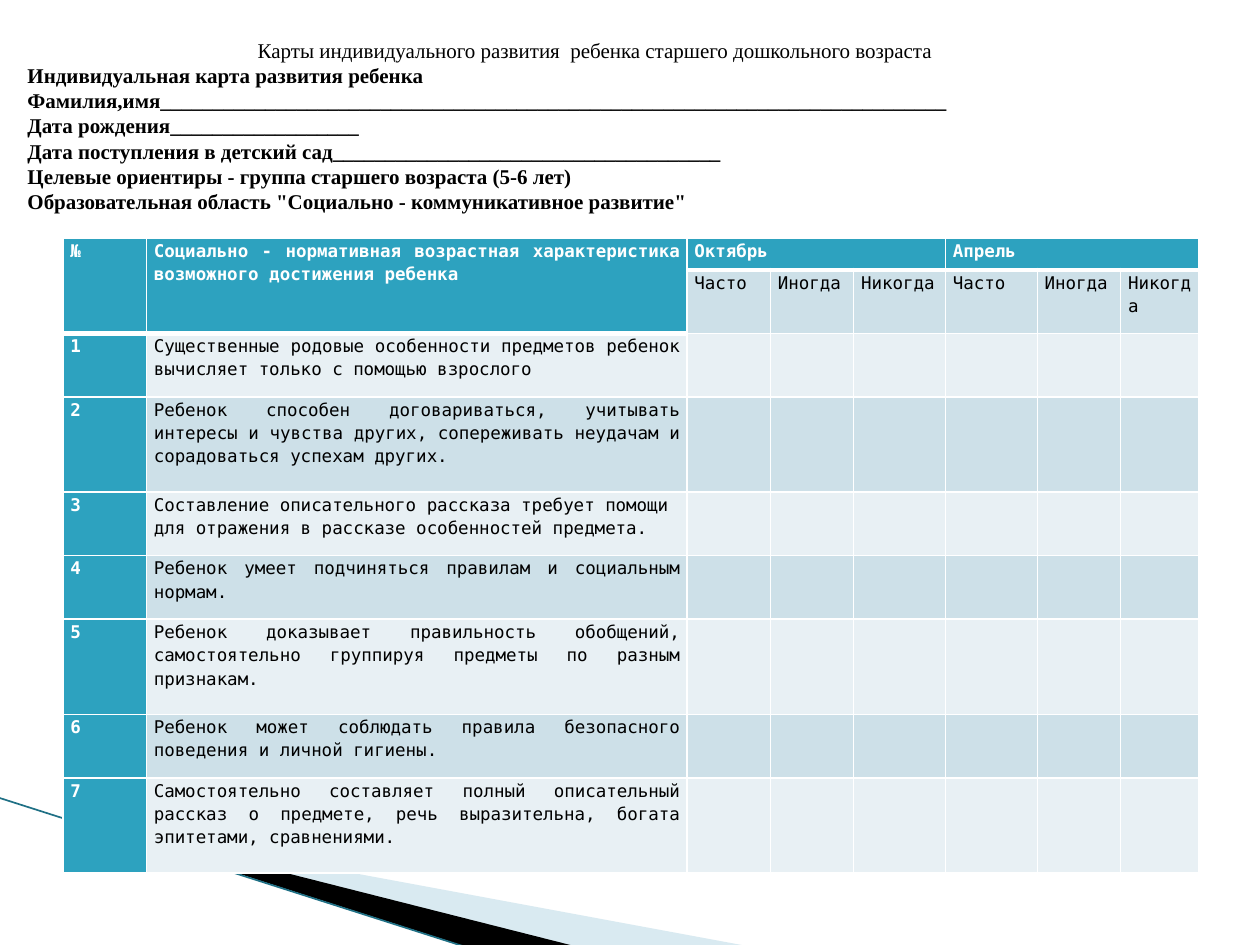
from lxml import etree
from pptx import Presentation
from pptx.dml.color import RGBColor
from pptx.enum.shapes import MSO_CONNECTOR
from pptx.enum.text import MSO_ANCHOR, MSO_AUTO_SIZE, PP_ALIGN
from pptx.oxml.ns import qn
from pptx.util import Cm, Pt

LEFT, CENTER, JUST = PP_ALIGN.LEFT, PP_ALIGN.CENTER, PP_ALIGN.JUSTIFY
SERIF, MONO = "Times New Roman", "DejaVu Sans Mono"
TEAL, PALE, MIST = "2DA2BF", "CDE0E8", "E8F0F4"
WHITE, BLACK = "FFFFFF", "000000"

# Content
HEAD = [
    "Карты индивидуального развития  ребенка старшего дошкольного возраста",
    "Индивидуальная карта развития ребенка",
    "Фамилия,имя" + "_" * 75,
    "Дата рождения" + "_" * 18,
    "Дата поступления в детский сад" + "_" * 37,
    "Целевые ориентиры - группа старшего возраста (5-6 лет)",
    'Образовательная область "Социально - коммуникативное развитие"',
]
LABEL = "Социально - нормативная возрастная характеристика возможного достижения ребенка"
MONTHS = ["Октябрь", "Апрель"]
RATES = ["Часто", "Иногда", "Никогда"]
GOALS = [
    "Существенные родовые особенности предметов ребенок вычисляет только с помощью взрослого",
    "Ребенок способен договариваться, учитывать интересы и чувства других, "
    "сопереживать неудачам и сорадоваться успехам других.",
    "Составление описательного рассказа требует помощи для отражения в рассказе "
    "особенностей предмета.",
    "Ребенок умеет подчиняться правилам и социальным нормам.",
    "Ребенок доказывает правильность обобщений, самостоятельно группируя предметы "
    "по разным признакам.",
    "Ребенок может соблюдать правила безопасного поведения и личной гигиены.",
    "Самостоятельно составляет полный описательный рассказ о предмете, речь "
    "выразительна, богата эпитетами, сравнениями.",
]
RAGGED = 3  # the one goal that is set flush left
COLS = [1.68, 10.9, 1.68, 1.68, 1.85, 1.85, 1.68, 1.57]
UNITS = [1, 2, 2, 3, 2, 2, 3, 2, 3]  # row heights in quarter inches
UNIT = 0.64
BANDS = [
    ([(1.4, 16.54), (15.11, 19.08), (11.58, 19.08), (1.4, 16.51)], "A0CBDC", 40),
    ([(1.35, 16.48), (11.61, 19.08), (9.45, 19.1), (1.37, 16.51)], BLACK, 100),
]


def color(code):
    return RGBColor.from_string(code)


def style(par, face, size, code, bold, align):
    par.alignment = align
    for run in par.runs:
        font = run.font
        font.name, font.size, font.bold = face, Pt(size), bold
        font.color.rgb = color(code)


def add_band(shapes, points, code, alpha):
    spots = [(Cm(x), Cm(y)) for x, y in points]
    pen = shapes.build_freeform(*spots[0])
    pen.add_line_segments(spots[1:], close=True)
    band = pen.convert_to_shape()
    band.shadow.inherit = False
    band.line.fill.background()
    band.fill.solid()
    band.fill.fore_color.rgb = color(code)
    if alpha < 100:
        tint = band.fill._xPr.find(".//" + qn("a:srgbClr"))
        etree.SubElement(tint, qn("a:alpha"), val=str(alpha * 1000))


def add_edges(cell, top, bottom):
    props = cell._tc.get_or_add_tcPr()
    for side, width in (("L", 1), ("R", 1), ("T", top), ("B", bottom)):
        line = etree.SubElement(props, qn("a:ln" + side), w=str(Pt(width)))
        fill = etree.SubElement(line, qn("a:solidFill"))
        etree.SubElement(fill, qn("a:srgbClr"), val=WHITE)


def fill_cell(cell, text, back, strong, align):
    cell.margin_left = cell.margin_right = Cm(0.15)
    cell.margin_top = cell.margin_bottom = 0
    cell.fill.solid()
    cell.fill.fore_color.rgb = color(back)
    cell.text_frame.text = text
    par = cell.text_frame.paragraphs[0]
    par.line_spacing = 1.15
    style(par, MONO, 10, WHITE if strong else BLACK, strong, align)


def add_grid(shapes):
    blank = [""] * 6
    rows = [["№", LABEL, MONTHS[0], "", "", MONTHS[1], "", ""], ["", ""] + RATES * 2]
    rows += [[str(n), goal] + blank for n, goal in enumerate(GOALS, 1)]
    frame = shapes.add_table(len(rows), len(COLS), Cm(1.27), Cm(4.8),
                             Cm(sum(COLS)), Cm(UNIT * sum(UNITS)))
    grid = frame.table
    grid.first_row = grid.horz_banding = False
    for col, width in zip(grid.columns, COLS):
        col.width = Cm(width)
    for row, units in zip(grid.rows, UNITS):
        row.height = Cm(UNIT * units)
    for r, row in enumerate(rows):
        for c, text in enumerate(row):
            cell = grid.cell(r, c)
            wide = c < 2  # header cells that run over two rows
            top = 3 if (r == 1 and not wide) or (r == 2 and wide) else 1
            bottom = 3 if r == 0 or (r == 1 and wide) else 1
            add_edges(cell, top, bottom)
            strong = r == 0 or c == 0 or (r == 1 and wide)
            back = TEAL if strong else PALE if r % 2 else MIST
            align = LEFT if r == RAGGED + 1 and c == 1 else JUST
            fill_cell(cell, text, back, strong, align)
    for c in (0, 1):
        grid.cell(0, c).merge(grid.cell(1, c))
    for c in (2, 5):
        grid.cell(0, c).merge(grid.cell(0, c + 2))


def main():
    deck = Presentation()
    deck.slide_width, deck.slide_height = Cm(25.4), Cm(19.05)
    slide = deck.slides.add_slide(deck.slide_layouts[5])
    shapes = slide.shapes

    # Corner bands and line
    for band in BANDS:
        add_band(shapes, *band)
    line = shapes.add_connector(MSO_CONNECTOR.STRAIGHT, Cm(-0.03), Cm(16.08), Cm(9.42), Cm(19.1))
    line.line.color.rgb = color("1F7085")
    line.line.width = Pt(0.95)
    etree.SubElement(line._element.spPr, qn("a:effectLst"))

    # Table of goals
    add_grid(shapes)

    # Heading with the form lines
    title = shapes.title
    title.left, title.top, title.width, title.height = Cm(0.3), Cm(0.56), Cm(23.4), Cm(3.94)
    frame = title.text_frame
    frame.text = "\n".join(HEAD)
    frame.word_wrap = True
    frame.auto_size = MSO_AUTO_SIZE.NONE
    frame.vertical_anchor = MSO_ANCHOR.MIDDLE
    for n, par in enumerate(frame.paragraphs):
        style(par, SERIF, 12, BLACK, n > 0, LEFT if n else CENTER)

    deck.save("out.pptx")


if __name__ == "__main__":
    main()
